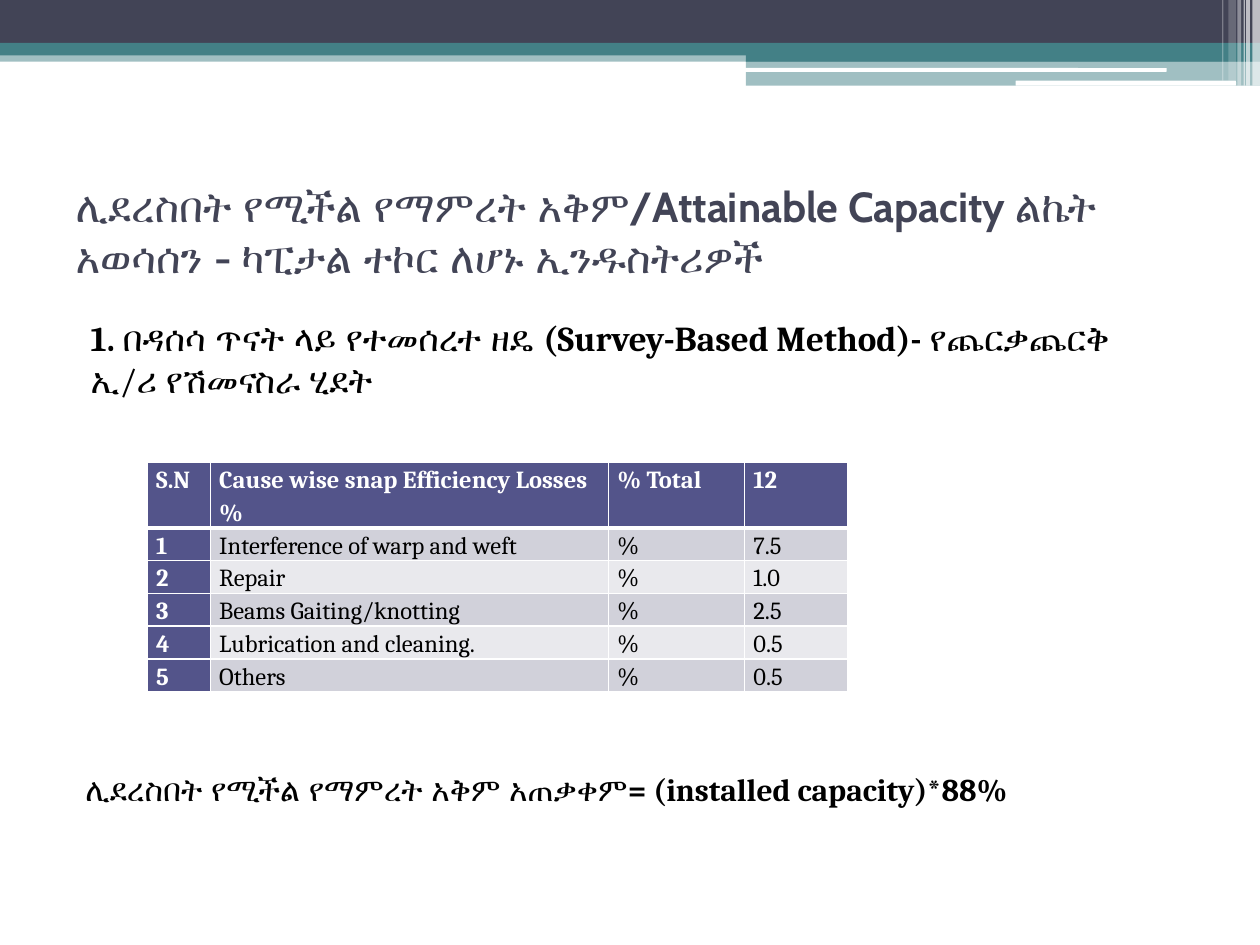
from dataclasses import dataclass

from lxml import etree
from pptx import Presentation
from pptx.dml.color import RGBColor
from pptx.enum.shapes import MSO_SHAPE
from pptx.enum.text import MSO_ANCHOR, MSO_AUTO_SIZE, PP_ALIGN
from pptx.oxml.ns import qn
from pptx.util import Pt

RECT = MSO_SHAPE.RECTANGLE
ROUNDED = MSO_SHAPE.ROUNDED_RECTANGLE
LEFT = PP_ALIGN.LEFT
TOP, MIDDLE, BOTTOM = MSO_ANCHOR.TOP, MSO_ANCHOR.MIDDLE, MSO_ANCHOR.BOTTOM
NO_AUTOFIT = MSO_AUTO_SIZE.NONE

EMU_PER_PX = 9144
EMU_PER_POINT = 12700


@dataclass(frozen=True)
class Theme:
    navy: str = "424456"
    teal: str = "438086"
    white: str = "FFFFFF"
    black: str = "000000"
    header: str = "53548A"
    odd_row: str = "D1D1DA"
    even_row: str = "E9E9ED"
    title_font: str = "Cabin"
    text_font: str = "Cambria"
    title_size: int = 24
    body_size: int = 20
    formula_size: int = 18
    table_size: int = 14


THEME = Theme()


@dataclass(frozen=True)
class Band:
    left: int
    top: int
    width: int
    height: int
    color: str = THEME.white
    opacity: int = 100
    kind: MSO_SHAPE = RECT


@dataclass(frozen=True)
class Loss:
    cause: str
    percent: str


BANDS = [
    Band(0, 40, 1000, 9, THEME.teal, 50),
    Band(0, 0, 1000, 34, THEME.navy),
    Band(0, 34, 1000, 10, THEME.teal),
    Band(592, 39, 408, 10, THEME.teal),
    Band(592, 48, 408, 20, THEME.teal, 50),
    Band(591, 54, 335, 3, kind=ROUNDED),
    Band(806, 64, 175, 4, kind=ROUNDED),
    Band(994, 0, 6, 68, opacity=65),
    Band(989, 0, 3, 68, opacity=65),
    Band(987, 0, 1, 68, opacity=60),
    Band(982, 0, 3, 68, opacity=40),
    Band(975, 0, 6, 64, opacity=20),
    Band(970, 0, 1, 64, opacity=30),
]

LOSS_HEADINGS = ["S.N", "Cause wise snap Efficiency Losses %", "% Total", "12"]
LOSSES = [
    Loss("Interference of warp and weft", "7.5"),
    Loss("Repair", "1.0"),
    Loss("Beams Gaiting/knotting", "2.5"),
    Loss("Lubrication and cleaning.", "0.5"),
    Loss("Others", "0.5"),
]
COLUMN_WIDTHS = [50, 316, 108, 82]
HEADER_HEIGHT, ROW_HEIGHT = 52, 26


def px(length: int) -> int:
    return length * EMU_PER_PX


def write(paragraph, text: str, *, size: int, font: str = THEME.text_font,
          color: str = THEME.black, bold: bool = False) -> None:
    run = paragraph.add_run()
    run.text = text
    run.font.size = Pt(size)
    run.font.name = font
    run.font.bold = bold
    run.font.color.rgb = RGBColor.from_string(color)


def place(shape, left: int, top: int, width: int, height: int, anchor):
    shape.left, shape.top = px(left), px(top)
    shape.width, shape.height = px(width), px(height)
    frame = shape.text_frame
    frame.word_wrap = True
    frame.auto_size = NO_AUTOFIT
    frame.vertical_anchor = anchor
    paragraph = frame.paragraphs[0]
    paragraph.alignment = LEFT
    paragraph.space_before = Pt(0)
    return paragraph


def draw_band(slide, band: Band) -> None:
    shape = slide.shapes.add_shape(
        band.kind, px(band.left), px(band.top), px(band.width), px(band.height))
    shape.shadow.inherit = False
    shape.line.fill.background()
    shape.fill.solid()
    shape.fill.fore_color.rgb = RGBColor.from_string(band.color)
    if band.opacity < 100:
        color = shape.fill._xPr.find(".//" + qn("a:srgbClr"))
        etree.SubElement(color, qn("a:alpha"), val=str(band.opacity * 1000))


def draw_border(cell, side: str, points: int) -> None:
    properties = cell._tc.get_or_add_tcPr()
    line = etree.SubElement(properties, qn("a:" + side), w=str(points * EMU_PER_POINT))
    fill = etree.SubElement(line, qn("a:solidFill"))
    etree.SubElement(fill, qn("a:srgbClr"), val=THEME.white)


def fill_cell(cell, text: str, row: int, column: int) -> None:
    is_heading = row == 0 or column == 0
    top_width = 3 if row == 1 else 1
    bottom_width = 3 if row == 0 else 1
    for side, points in [("lnL", 1), ("lnR", 1), ("lnT", top_width), ("lnB", bottom_width)]:
        draw_border(cell, side, points)
    band_color = THEME.odd_row if row % 2 else THEME.even_row
    cell.fill.solid()
    cell.fill.fore_color.rgb = RGBColor.from_string(THEME.header if is_heading else band_color)
    cell.margin_left = cell.margin_right = px(7)
    cell.margin_top = cell.margin_bottom = 0
    paragraph = cell.text_frame.paragraphs[0]
    paragraph.line_spacing = 1.15
    write(paragraph, text, size=THEME.table_size, bold=is_heading,
          color=THEME.white if is_heading else THEME.black)


def draw_losses(slide, left: int, top: int) -> None:
    rows = [LOSS_HEADINGS]
    rows += [[str(number), loss.cause, "%", loss.percent]
             for number, loss in enumerate(LOSSES, 1)]
    heights = [HEADER_HEIGHT] + [ROW_HEIGHT] * len(LOSSES)
    table = slide.shapes.add_table(
        len(rows), len(COLUMN_WIDTHS), px(left), px(top),
        px(sum(COLUMN_WIDTHS)), px(sum(heights))).table
    for column, width in zip(table.columns, COLUMN_WIDTHS):
        column.width = px(width)
    for row_index, (texts, height) in enumerate(zip(rows, heights)):
        table.rows[row_index].height = px(height)
        for column_index, text in enumerate(texts):
            fill_cell(table.cell(row_index, column_index), text, row_index, column_index)


def main() -> None:
    deck = Presentation()
    deck.slide_width, deck.slide_height = px(1000), px(750)
    slide = deck.slides.add_slide(deck.slide_layouts[1])

    for band in BANDS:
        draw_band(slide, band)

    title = place(slide.shapes.title, 50, 125, 900, 117, MIDDLE)
    write(title, "ሊደረስበት የሚችል የማምረት አቅም/Attainable Capacity ልኬት አወሳሰን - ካፒታል ተኮር ለሆኑ ኢንዱስትሪዎች",
          size=THEME.title_size, font=THEME.title_font, color=THEME.navy, bold=True)

    method = place(slide.placeholders[1], 50, 246, 900, 473, TOP)
    method_properties = method._p.get_or_add_pPr()
    method_properties.set("marL", str(px(12)))
    method_properties.set("indent", "0")
    etree.SubElement(method_properties, qn("a:buNone"))
    write(method, "1. በዳሰሳ ጥናት ላይ የተመሰረተ ዘዴ (Survey-Based Method)- ",
          size=THEME.body_size, bold=True)
    write(method, "የጨርቃጨርቅ ኢ/ሪ የሽመናስራ ሂደት", size=THEME.body_size)

    draw_losses(slide, 117, 367)

    formula_box = slide.shapes.add_textbox(0, 0, 0, 0)
    formula = place(formula_box, 58, 575, 925, 71, BOTTOM)
    write(formula, "ሊደረስበት የሚችል የማምረት አቅም አጠቃቀም= (installed capacity)*88%",
          size=THEME.formula_size, bold=True)

    deck.save("out.pptx")


if __name__ == "__main__":
    main()
